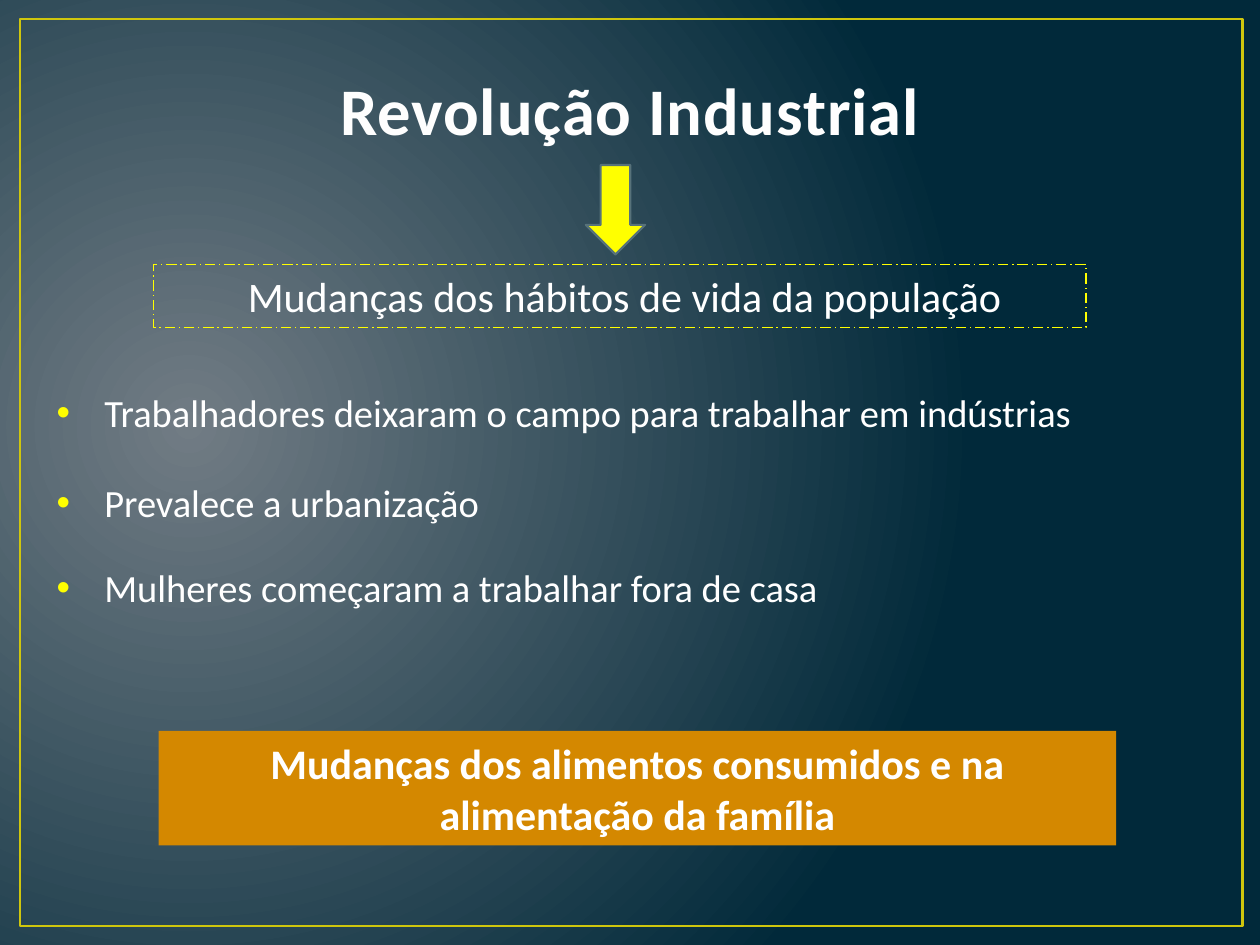
import pptx
import pptx.dml.color
import pptx.enum.dml
import pptx.enum.shapes
import pptx.enum.text
import pptx.oxml
import pptx.oxml.ns
import pptx.util

RGBColor = pptx.dml.color.RGBColor
Shape = pptx.enum.shapes.MSO_SHAPE
Align = pptx.enum.text.PP_ALIGN
Anchor = pptx.enum.text.MSO_ANCHOR
inches = pptx.util.Inches

WHITE = RGBColor(0xFF, 0xFF, 0xFF)
TITLE_WHITE = RGBColor(0xFE, 0xFE, 0xFE)
YELLOW = RGBColor(0xFF, 0xFF, 0x00)
FRAME_YELLOW = RGBColor(0xCF, 0xC6, 0x0D)
ORANGE = RGBColor(0xD4, 0x88, 0x00)
ARROW_EDGE = RGBColor(0x57, 0x72, 0x7A)
TITLE_EDGE = RGBColor(0x38, 0x4F, 0x55)
GLOW = RGBColor(0x71, 0x7C, 0x84)
NIGHT = RGBColor(0x01, 0x29, 0x3A)
NAMESPACES = pptx.oxml.ns.nsdecls("a", "p")


def write(shape, text, size, color=WHITE, bold=False, align=Align.CENTER, anchor=Anchor.MIDDLE):
    frame = shape.text_frame
    frame.word_wrap = True
    frame.auto_size = pptx.enum.text.MSO_AUTO_SIZE.NONE
    frame.vertical_anchor = anchor
    para = frame.paragraphs[0]
    para.alignment = align
    span = para.add_run()
    span.text = text
    span.font.name = "Calibri"
    span.font.size = pptx.util.Pt(size)
    span.font.bold = bold
    span.font.color.rgb = color
    return para


def draw(kind, left, top, width, height, fill=None, line=None, weight=1):
    shape = page.shapes.add_shape(kind, inches(left), inches(top), inches(width), inches(height))
    shape.shadow.inherit = False
    if fill is None:
        shape.fill.background()
    else:
        shape.fill.solid()
        shape.fill.fore_color.rgb = fill
    if line is None:
        shape.line.fill.background()
    else:
        shape.line.color.rgb = line
        shape.line.width = pptx.util.Pt(weight)
    return shape


deck = pptx.Presentation()
deck.slide_width = inches(10)
deck.slide_height = inches(7.5)
page = deck.slides.add_slide(deck.slide_layouts[5])

# Background: a round glow left of the centre
page.element.cSld.insert(0, pptx.oxml.parse_xml(
    f'<p:bg {NAMESPACES}><p:bgPr><a:gradFill rotWithShape="1"><a:gsLst>'
    f'<a:gs pos="0"><a:srgbClr val="{GLOW}"/></a:gs>'
    f'<a:gs pos="100000"><a:srgbClr val="{NIGHT}"/></a:gs></a:gsLst>'
    '<a:path path="circle"><a:fillToRect l="15000" t="50000" r="85000" b="60000"/></a:path>'
    '</a:gradFill><a:effectLst/></p:bgPr></p:bg>'))

draw(Shape.RECTANGLE, 0.16, 0.15, 9.7, 7.2, line=FRAME_YELLOW, weight=1.5)

# Title
title = page.shapes.title
title.left, title.top, title.width, title.height = map(inches, (0.5, 0.3, 9, 0.93))
heading = write(title, "Revolução Industrial", 38, color=TITLE_WHITE, bold=True, anchor=Anchor.BOTTOM)
letters = heading.runs[0].font._element
letters.set("spc", "50")
letters.insert(0, pptx.oxml.parse_xml(
    f'<a:ln {NAMESPACES} w="13335"><a:solidFill><a:srgbClr val="{TITLE_EDGE}"/></a:solidFill></a:ln>'))

# Change of habits and its outcome
habits = draw(Shape.RECTANGLE, 1.22, 2.1, 7.4, 0.5, line=YELLOW, weight=0.75)
habits.line.dash_style = pptx.enum.dml.MSO_LINE.LONG_DASH_DOT
write(habits, " Mudanças dos hábitos de vida da população", 24)
foods = draw(Shape.RECTANGLE, 1.26, 5.8, 7.6, 0.91, fill=ORANGE)
write(foods, "Mudanças dos alimentos consumidos e na alimentação da família", 24, bold=True)

# Bulleted effects
effects = [
    (3.04, "Trabalhadores deixaram o campo para trabalhar em indústrias"),
    (3.75, "Prevalece a urbanização"),
    (4.43, "Mulheres começaram a trabalhar fora de casa"),
]
for top, text in effects:
    box = page.shapes.add_textbox(inches(0.35), inches(top), inches(9.21), inches(0.47))
    para = write(box, text, 22, align=Align.LEFT, anchor=Anchor.TOP)
    settings = para._p.get_or_add_pPr()
    settings.set("marL", str(inches(0.38)))
    settings.set("indent", str(-inches(0.38)))
    for bullet in (f'<a:buClr {NAMESPACES}><a:srgbClr val="{YELLOW}"/></a:buClr>',
                   f'<a:buFont {NAMESPACES} typeface="Arial"/>',
                   f'<a:buChar {NAMESPACES} char="•"/>'):
        settings.append(pptx.oxml.parse_xml(bullet))

draw(Shape.DOWN_ARROW, 4.65, 1.31, 0.47, 0.71, fill=YELLOW, line=ARROW_EDGE, weight=1.25)

deck.save("out.pptx")
